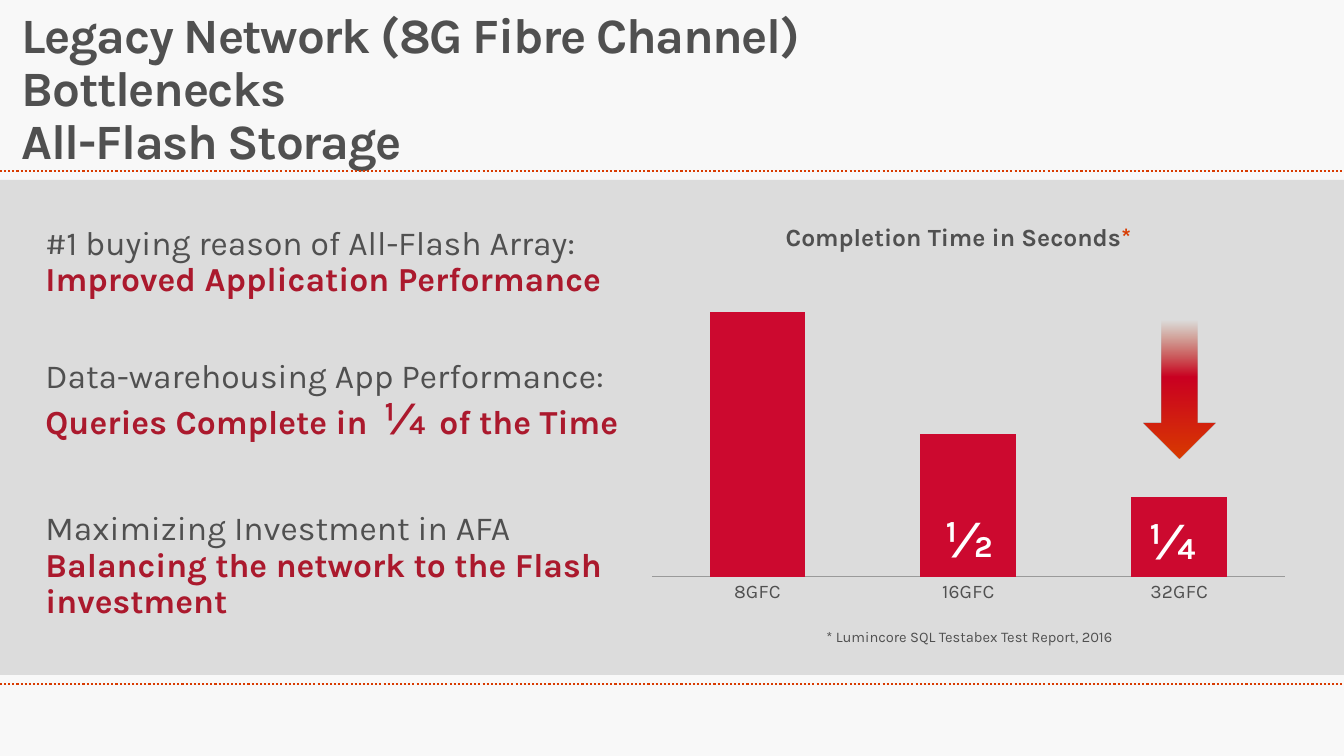
from lxml import etree
from pptx import Presentation
from pptx.chart.data import CategoryChartData
from pptx.dml.color import RGBColor
from pptx.enum.chart import XL_CHART_TYPE, XL_TICK_MARK
from pptx.enum.dml import MSO_LINE
from pptx.enum.shapes import MSO_CONNECTOR, MSO_SHAPE
from pptx.enum.text import MSO_ANCHOR, MSO_AUTO_SIZE, PP_ALIGN
from pptx.oxml import parse_xml
from pptx.oxml.ns import qn
from pptx.util import Inches, Pt

COLUMNS = XL_CHART_TYPE.COLUMN_CLUSTERED
NO_TICKS = XL_TICK_MARK.NONE
DOTTED = MSO_LINE.ROUND_DOT
STRAIGHT = MSO_CONNECTOR.STRAIGHT
RECTANGLE, DOWN_ARROW = MSO_SHAPE.RECTANGLE, MSO_SHAPE.DOWN_ARROW
MIDDLE, TOP = MSO_ANCHOR.MIDDLE, MSO_ANCHOR.TOP
FIXED = MSO_AUTO_SIZE.NONE
LEFT, CENTER = PP_ALIGN.LEFT, PP_ALIGN.CENTER

FONT = "Karla"
GREY, CRIMSON, RED, ORANGE, WHITE = "505050", "AB192D", "CC092F", "D83B01", "FFFFFF"
PANEL, PAPER, AXIS = "DCDCDC", "F8F8F8", "9A9A9A"
WIDTH, HEIGHT = 13.6, 7.65
CHART_NS = "http://schemas.openxmlformats.org/drawingml/2006/chart"
DRAWING_NS = "http://schemas.openxmlformats.org/drawingml/2006/main"


def rgb(value):
    return RGBColor.from_string(value)


def style_font(font, size, color=GREY, bold=False):
    font.name, font.size, font.bold = FONT, Pt(size), bold
    font.color.rgb = rgb(color)


def write(frame, paragraphs, size, color=GREY, bold=False, align=LEFT,
          anchor=TOP, before=0, wrap=True, inset=0, tracking=None):
    """Fill a frame; each run is a string or (string, format overrides)."""
    frame.word_wrap, frame.auto_size, frame.vertical_anchor = wrap, FIXED, anchor
    frame.margin_left = frame.margin_right = Inches(inset)
    frame.margin_top = frame.margin_bottom = Inches(inset / 2)
    for index, runs in enumerate(paragraphs):
        paragraph = frame.add_paragraph() if index else frame.paragraphs[0]
        paragraph.alignment, paragraph.line_spacing = align, 0.9
        paragraph.space_before = Pt(before)
        for item in runs:
            words, changes = (item, {}) if isinstance(item, str) else item
            for number, part in enumerate(words.split("\v")):
                if number:
                    paragraph.add_line_break()
                run = paragraph.add_run()
                run.text = part
                style_font(run.font, **{"size": size, "color": color, "bold": bold, **changes})
                if tracking is not None:
                    run.font._element.set("spc", str(tracking))


def manual_layout(x, y, width=None, height=None):
    """Chart layout given in fractions of the chart area."""
    values = {"xMode": "edge", "yMode": "edge", "x": x, "y": y}
    if width:
        values = {"layoutTarget": "inner", **values, "w": width, "h": height}
    fields = "".join(f'<c:{key} val="{value}"/>' for key, value in values.items())
    return parse_xml(f'<c:layout xmlns:c="{CHART_NS}"><c:manualLayout>'
                     f'{fields}</c:manualLayout></c:layout>')


class SlideBuilder:
    def __init__(self, presentation):
        self.slide = presentation.slides.add_slide(presentation.slide_layouts[5])
        self.shapes = self.slide.shapes
        background = self.slide.background.fill
        background.solid()
        background.fore_color.rgb = rgb(PAPER)

    def title(self, words, box, **style):
        heading = self.shapes.title
        heading.left, heading.top, heading.width, heading.height = map(Inches, box)
        write(heading.text_frame, [[words]], **style)

    def text(self, box, paragraphs, **style):
        frame = self.shapes.add_textbox(*map(Inches, box)).text_frame
        write(frame, paragraphs, **style)

    def shape(self, kind, box):
        drawn = self.shapes.add_shape(kind, *map(Inches, box))
        drawn.shadow.inherit = False
        drawn.line.fill.background()
        return drawn

    def panel(self, box, color):
        fill = self.shape(RECTANGLE, box).fill
        fill.solid()
        fill.fore_color.rgb = rgb(color)

    def fading_arrow(self, box, stops):
        """Down arrow with (position, colour, opacity) stops, all in percent."""
        arrow = self.shape(DOWN_ARROW, box)
        arrow.fill.gradient()
        arrow.fill.gradient_angle = 270
        stop_list = arrow._element.spPr.find(qn("a:gradFill")).find(qn("a:gsLst"))
        for old in list(stop_list):
            stop_list.remove(old)
        for position, color, opacity in stops:
            stop = etree.SubElement(stop_list, qn("a:gs"), pos=str(position * 1000))
            shade = etree.SubElement(stop, qn("a:srgbClr"), val=color)
            etree.SubElement(shade, qn("a:alpha"), val=str(opacity * 1000))

    def dotted_rule(self, y):
        rule = self.shapes.add_connector(STRAIGHT, 0, Inches(y), Inches(WIDTH), Inches(y))
        rule.line.color.rgb = rgb(ORANGE)
        rule.line.width, rule.line.dash_style = Pt(1.5), DOTTED
        etree.SubElement(rule._element.spPr, qn("a:effectLst"))

    def column_chart(self, box, title_runs, categories, values):
        data = CategoryChartData()
        data.categories = categories
        data.add_series("Series 1", values)
        chart = self.shapes.add_chart(COLUMNS, *map(Inches, box), data).chart
        style_font(chart.font, 18)
        chart.has_legend = False
        chart.has_title = True
        write(chart.chart_title.text_frame, [title_runs], size=18, bold=True, align=CENTER)
        title = chart.chart_title._element
        for old in title.findall(qn("c:layout")):
            title.remove(old)
        title.find(qn("c:tx")).addnext(manual_layout(0.25, 0.04))
        chart.chart_title.include_in_layout = False

        plot = chart.plots[0]
        plot.gap_width, plot.vary_by_categories = 120, False
        fill = plot.series[0].format.fill
        fill.solid()
        fill.fore_color.rgb = rgb(RED)
        plot_area = chart._chartSpace.chart.plotArea
        for old in plot_area.findall(qn("c:layout")):
            plot_area.remove(old)
        plot_area.insert(0, manual_layout(0.06, 0.21, 0.92, 0.62))

        scale = chart.value_axis
        scale.minimum_scale, scale.maximum_scale = 0, 106
        scale.has_major_gridlines = scale.visible = False
        axis = chart.category_axis
        axis.major_tick_mark = axis.minor_tick_mark = NO_TICKS
        axis.format.line.color.rgb = rgb(AXIS)
        axis.format.line.width = Pt(0.75)
        style_font(axis.tick_labels.font, 14)


def main():
    presentation = Presentation()
    presentation.slide_width, presentation.slide_height = Inches(WIDTH), Inches(HEIGHT)
    page = SlideBuilder(presentation)
    page.title("Legacy Network (8G Fibre Channel) Bottlenecks \vAll-Flash Storage",
               (0.22, 0.37, 10.33, 1.09), size=36, bold=True, anchor=MIDDLE, tracking=-100)
    page.panel((0, 1.82, WIDTH, 5.01), PANEL)
    for y in (1.73, 6.92):
        page.dotted_rule(y)

    key = {"color": CRIMSON, "bold": True}
    messages = [
        (2.29, 5.74, 0.76, [["#1 buying reason of All-Flash Array: ",
                             ("Improved Application Performance", key)]]),
        (3.64, 5.91, 0.87, [["Data-warehousing App Performance:"],
                            [("Queries Complete in  ", key), ("¼ ", {**key, "size": 32.6}),
                             ("of the Time", key)]]),
        (5.18, 5.91, 1.13, [["Maximizing Investment in AFA"],
                            [("Balancing the network to the Flash investment", key)]]),
    ]
    for top, width, height, paragraphs in messages:
        page.text((0.46, top, width, height), paragraphs, size=24.5)

    page.column_chart((6.18, 2.03, 6.96, 4.59),
                      ["Completion Time in Seconds", ("*", {"color": ORANGE})],
                      ["8GFC", "16GFC", "32GFC"], [100, 54, 30])
    page.fading_arrow((11.57, 3.24, 0.73, 1.4),
                      [(0, "B73100", 0), (41, "CA0022", 100), (100, "D93B00", 100)])
    fraction = {"size": 36.7, "color": WHITE, "bold": True, "align": CENTER}
    page.text((11.46, 5.22, 0.96, 0.57), [["¼ "]], before=6.1, **fraction)
    page.text((9.35, 5.15, 0.93, 0.67), [["½"]], inset=0.1, **fraction)
    page.text((8.32, 6.37, 2.98, 0.17), [["* Lumincore SQL Testabex Test Report, 2016"]],
              size=10.7, align=CENTER, before=6.1, wrap=False)
    presentation.save("out.pptx")


if __name__ == "__main__":
    main()
